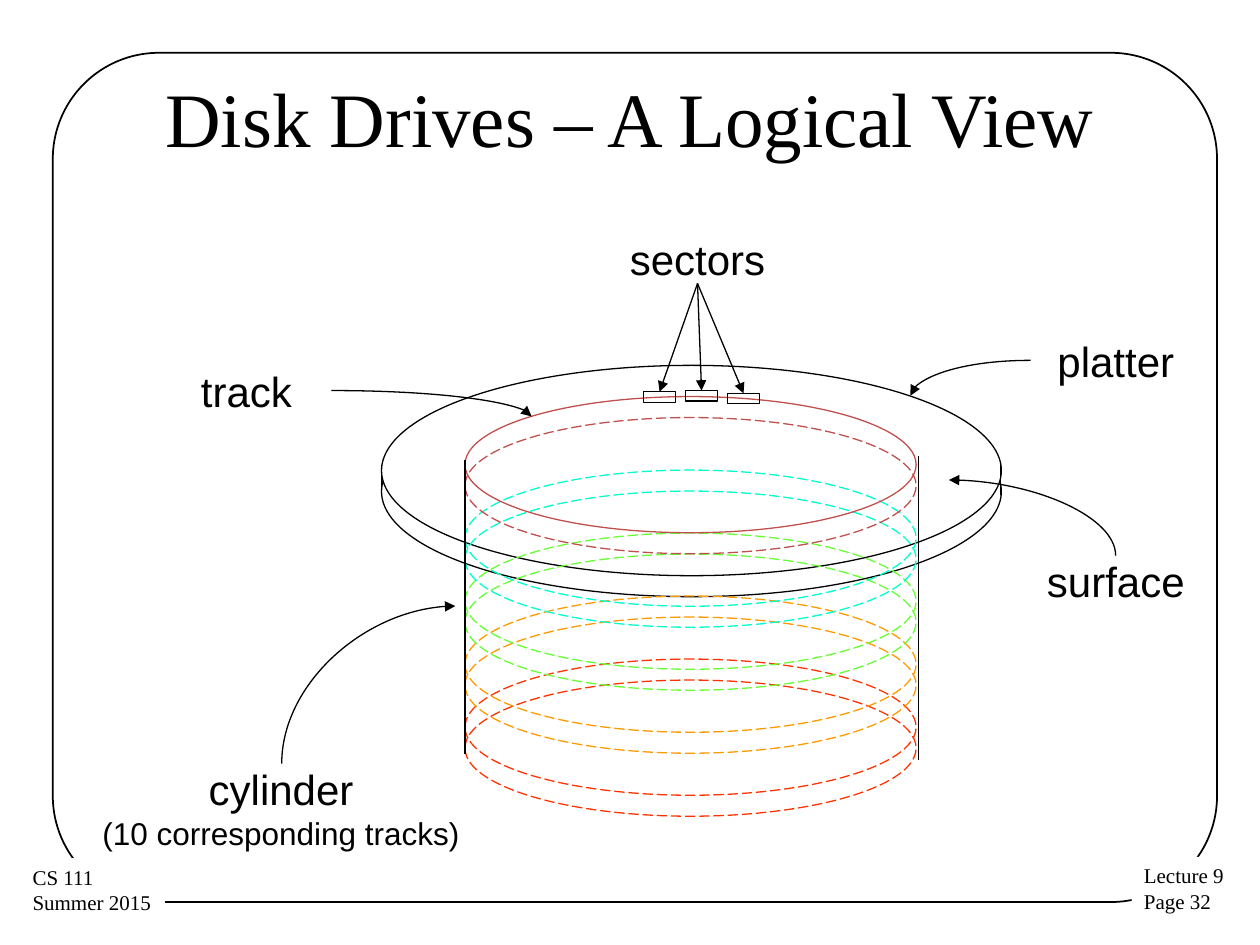
import pptx
import pptx.util
import pptx.dml.color
import pptx.enum.dml
import pptx.enum.shapes
import pptx.enum.text
import pptx.oxml
import pptx.oxml.ns

Pt = pptx.util.Pt
RGBColor = pptx.dml.color.RGBColor
SHAPE = pptx.enum.shapes.MSO_SHAPE
CONNECTOR = pptx.enum.shapes.MSO_CONNECTOR
ALIGN = pptx.enum.text.PP_ALIGN
ANCHOR = pptx.enum.text.MSO_ANCHOR
LONG_DASH = pptx.enum.dml.MSO_LINE.LONG_DASH

BLACK = RGBColor(0x00, 0x00, 0x00)
WHITE = RGBColor(0xFF, 0xFF, 0xFF)
BRICK = RGBColor(0xC0, 0x50, 0x4D)
AQUA = RGBColor(0x00, 0xFF, 0xCC)
GREEN = RGBColor(0x66, 0xFF, 0x33)
ORANGE = RGBColor(0xFF, 0x99, 0x00)
RED = RGBColor(0xFF, 0x33, 0x00)

SERIF = {"name": "Times New Roman", "size": Pt(12)}
TITLE = {"name": "Times New Roman", "size": Pt(44)}
LABEL = {"name": "Arial", "size": Pt(24)}
NOTE = {"name": "Arial", "size": Pt(18)}

# Boxes are left, top, width, height in points
FRAME = (30.2, 30.2, 665.3, 485.3)
FOOTERS = [
    ((646.6, 489.6, 60.5, 36.7), ["Lecture 9", "Page 32"]),
    ((11.5, 490.3, 82.8, 36.7), ["CS 111", "Summer 2015"]),
]
HEADING = ((36, 21.6, 648, 90), "Disk Drives – A Logical View")
LABELS = {
    "cylinder": (49.7, 436.3, 221.8, 74.2),
    "platter": (589, 191.5, 97.2, 28.8),
    "surface": (589, 317.5, 97.2, 28.8),
    "track": (92.2, 208.8, 97.2, 28.8),
    "sectors": (350, 133.2, 97.2, 28.8),
}
LABEL_NOTES = {"cylinder": "(10 corresponding tracks)"}

PLATTER = (218, 208.8, 354.2, 120.2)
TRACK_LEFT, TRACK_WIDTH, TRACK_HEIGHT = 265.7, 257.8, 77.8
THICKNESS = 12
TRACK_PAIRS = [(RED, 376.6), (ORANGE, 340.6), (GREEN, 304.6), (AQUA, 268.6), (BRICK, 226.6)]
SECTOR_SIZE = (18, 6)
SECTORS = [(367.9, 223.9), (391.9, 223.2), (415.9, 224.8)]
SIDES = [
    ((524.9, 260.6), (524.9, 434.2)),
    ((265.7, 262.8), (265.7, 430.6)),
    ((218, 283.7), (218, 265.7)),
    ((571.9, 283), (571.9, 265)),
]
# Start, end, whether the curve leaves its start vertically
POINTERS = [
    ((161, 436.3), (260.2, 346.3), True),
    ((189.4, 223.2), (303.8, 238), False),
    ((637.5, 317.5), (542.2, 274.3), True),
    ((589, 205.9), (520.2, 226.1), False),
]


def add_outline(page, kind, box, color=BLACK, width=0.75, fill=None, dash=None):
    shape = page.shapes.add_shape(kind, *map(Pt, box))
    shape.shadow.inherit = False
    if fill is None:
        shape.fill.background()
    else:
        shape.fill.solid()
        shape.fill.fore_color.rgb = fill
    shape.line.color.rgb = color
    shape.line.width = Pt(width)
    if dash:
        shape.line.dash_style = dash
    return shape


def add_text(page, box, lines, align=ALIGN.CENTER, wrap=True, insets=(0, 0),
             anchor=ANCHOR.TOP, fill=None):
    """Add a text box; lines are pairs of text and font format."""
    shape = page.shapes.add_textbox(*map(Pt, box))
    if fill is not None:
        shape.fill.solid()
        shape.fill.fore_color.rgb = fill
    frame = shape.text_frame
    across, down = map(Pt, insets)
    settings = {"word_wrap": wrap, "vertical_anchor": anchor, "margin_left": across,
                "margin_right": across, "margin_top": down, "margin_bottom": down}
    for key, value in settings.items():
        setattr(frame, key, value)
    for index, (text, style) in enumerate(lines):
        para = frame.add_paragraph() if index else frame.paragraphs[0]
        para.alignment = align
        span = para.add_run()
        span.text = text
        for key, value in style.items():
            setattr(span.font, key, value)
        span.font.color.rgb = BLACK
    return shape


def add_line(page, start, end, kind=CONNECTOR.STRAIGHT, arrow=False):
    line = page.shapes.add_connector(kind, *map(Pt, start + end))
    line.line.color.rgb = BLACK
    line.line.width = Pt(0.75)
    if arrow:
        head = pptx.oxml.parse_xml(
            f'<a:tailEnd {pptx.oxml.ns.nsdecls("a")} type="triangle"/>')
        line.line._get_or_add_ln().append(head)
    line._element.spPr.append(
        pptx.oxml.parse_xml(f'<a:effectLst {pptx.oxml.ns.nsdecls("a")}/>'))
    return line


def add_pointer(page, start, end, vertical):
    """Add a quarter-turn arrow; a vertical start is a level one turned by 270 degrees."""
    if vertical:
        middle = [(a + b) / 2 for a, b in zip(start, end)]
        across, down = start[1] - end[1], end[0] - start[0]
        start = (middle[0] - across / 2, middle[1] - down / 2)
        end = (middle[0] + across / 2, middle[1] + down / 2)
    pointer = add_line(page, start, end, CONNECTOR.CURVE, arrow=True)
    properties = pointer._element.spPr
    properties.find(pptx.oxml.ns.qn("a:prstGeom")).set("prst", "curvedConnector2")
    if vertical:
        properties.find(pptx.oxml.ns.qn("a:xfrm")).set("rot", str(270 * 60000))


deck = pptx.Presentation()
deck.slide_width, deck.slide_height = Pt(720), Pt(540)
page = deck.slides.add_slide(deck.slide_layouts[6])

border = add_outline(page, SHAPE.ROUNDED_RECTANGLE, FRAME, width=1)
border.adjustments[0] = 0.125
for box, lines in FOOTERS:
    add_text(page, box, [(text, SERIF) for text in lines], ALIGN.LEFT, False,
             (7.2, 3.6), fill=WHITE)
box, heading = HEADING
add_text(page, box, [(heading, TITLE)], insets=(7.2, 3.6), anchor=ANCHOR.MIDDLE)

left, top, width, height = PLATTER
add_outline(page, SHAPE.OVAL, (left, top + THICKNESS, width, height))
add_outline(page, SHAPE.OVAL, PLATTER, fill=WHITE)

label_boxes = {}
for text, box in LABELS.items():
    lines = [(text, LABEL)]
    if text in LABEL_NOTES:
        lines.append((LABEL_NOTES[text], NOTE))
    label_boxes[text] = add_text(page, box, lines)

for color, top in TRACK_PAIRS:
    for offset in (THICKNESS, 0):
        is_top_track = color == BRICK and offset == 0
        add_outline(page, SHAPE.OVAL, (TRACK_LEFT, top + offset, TRACK_WIDTH, TRACK_HEIGHT),
                    color, dash=None if is_top_track else LONG_DASH)

for start, end in SIDES:
    add_line(page, start, end)
for start, end, vertical in POINTERS:
    add_pointer(page, start, end, vertical)
for corner in SECTORS:
    sector = add_outline(page, SHAPE.RECTANGLE, corner + SECTOR_SIZE)
    arrow = add_line(page, (398.6, 162), corner, arrow=True)
    arrow.begin_connect(label_boxes["sectors"], 2)
    arrow.end_connect(sector, 0)

deck.save("out.pptx")
